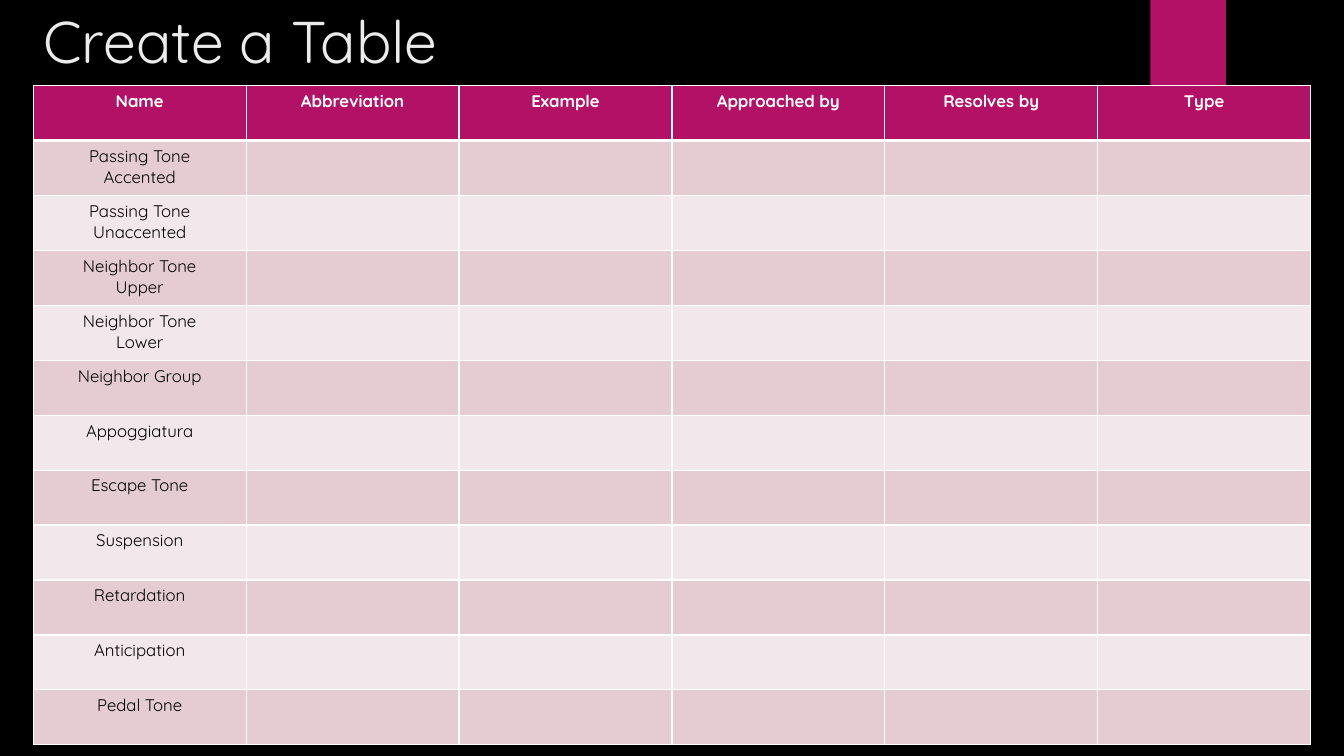
from lxml import etree
from pptx import Presentation
from pptx import util as u
from pptx.dml.color import RGBColor
from pptx.enum import shapes, text
from pptx.oxml.ns import qn

FONT = "Quicksand"
MAGENTA, WHITE, BLACK = "B31166", "FFFFFF", "000000"
BANDS = ["E5CCD3", "F2E7EA"]
HEADERS = ["Name", "Abbreviation", "Example", "Approached by", "Resolves by", "Type"]
TONES = [
    ["Passing Tone", "Accented"],
    ["Passing Tone", "Unaccented"],
    ["Neighbor Tone", "Upper"],
    ["Neighbor Tone", "Lower"],
    ["Neighbor Group"],
    ["Appoggiatura"],
    ["Escape Tone"],
    ["Suspension"],
    ["Retardation"],
    ["Anticipation"],
    ["Pedal Tone"],
]


def rgb(value):
    return RGBColor.from_string(value)


def write(tf, lines, size=12, color=BLACK, bold=False, align=text.PP_ALIGN.CENTER):
    """Fill a text frame with one paragraph per line."""
    for i, line in enumerate(lines):
        p = tf.paragraphs[0] if i == 0 else tf.add_paragraph()
        p.alignment = align
        r = p.add_run()
        r.text = line
        r.font.name, r.font.size, r.font.bold = FONT, u.Pt(size), bold
        r.font.color.rgb = rgb(color)


def set_borders(cell, **widths):
    """Draw white borders; widths in points by side L, R, T, B."""
    tcPr = cell._tc.get_or_add_tcPr()
    for side in "LRTB":
        ln = etree.SubElement(tcPr, qn("a:ln" + side), w=str(u.Pt(widths.get(side, 1))))
        fill = etree.SubElement(ln, qn("a:solidFill"))
        etree.SubElement(fill, qn("a:srgbClr"), val=WHITE)


def format_cell(cell, fill, **borders):
    set_borders(cell, **borders)
    cell.fill.solid()
    cell.fill.fore_color.rgb = rgb(fill)


def add_accent_tab(s, left, top, width, height):
    sp = s.shapes.add_shape(shapes.MSO_SHAPE.RECTANGLE, left, top, width, height)
    sp.shadow.inherit = False
    sp.fill.solid()
    sp.fill.fore_color.rgb = rgb(MAGENTA)
    sp.line.fill.background()


def add_title(s, title, left, top, width, height):
    sp = s.shapes.title
    sp.left, sp.top, sp.width, sp.height = left, top, width, height
    tf = sp.text_frame
    tf.word_wrap = True
    tf.auto_size = text.MSO_AUTO_SIZE.NONE
    tf.vertical_anchor = text.MSO_ANCHOR.TOP
    write(tf, [title], size=42, color="EBEBEB", align=text.PP_ALIGN.LEFT)


def add_tone_table(s, left, top, width, height):
    n_rows, n_cols = len(TONES) + 1, len(HEADERS)
    table = s.shapes.add_table(n_rows, n_cols, left, top, width, height).table
    for column in table.columns:
        column.width = int(width / n_cols)
    for row in table.rows:
        row.height = int(height / n_rows)
    for c, header in enumerate(HEADERS):
        cell = table.cell(0, c)
        format_cell(cell, MAGENTA, B=3)
        write(cell.text_frame, [header], color=WHITE, bold=True)
    for i, tone in enumerate(TONES):
        for c in range(n_cols):
            format_cell(table.cell(i + 1, c), BANDS[i % 2], T=3 if i == 0 else 1)
        write(table.cell(i + 1, 0).text_frame, tone)


def main():
    prs = Presentation()
    prs.slide_width, prs.slide_height = u.Inches(13.33), u.Inches(7.5)
    s = prs.slides.add_slide(prs.slide_layouts[5])
    s.background.fill.solid()
    s.background.fill.fore_color.rgb = rgb(BLACK)
    add_accent_tab(s, u.Inches(11.41), 0, u.Inches(0.75), u.Inches(1.25))
    add_title(s, "Create a Table", u.Inches(0.33), 0, u.Inches(10.29), u.Inches(1.53))
    add_tone_table(s, u.Inches(0.33), u.Inches(0.85), u.Inches(12.67), u.Inches(6.54))
    prs.save("out.pptx")


if __name__ == "__main__":
    main()
